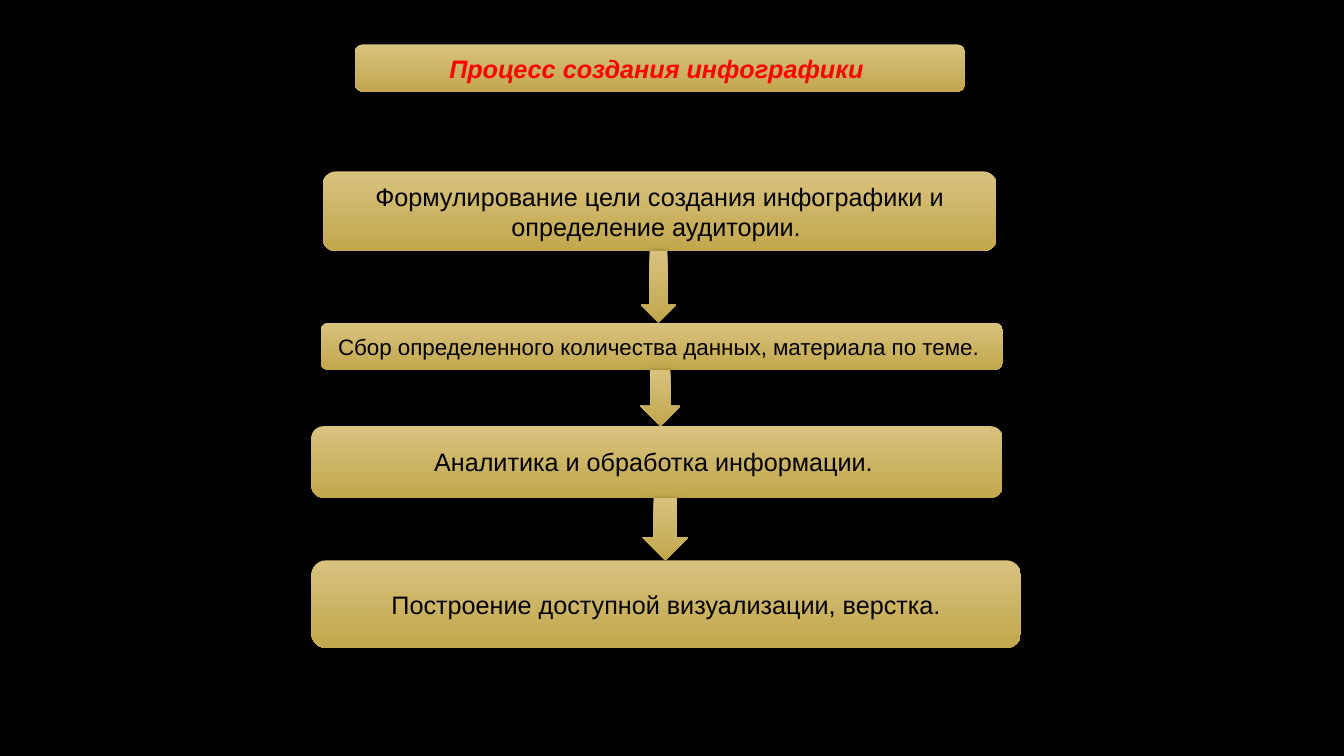
from dataclasses import dataclass

from lxml import etree
from pptx import Presentation
from pptx.dml.color import RGBColor
from pptx.enum.shapes import MSO_SHAPE
from pptx.enum.text import MSO_ANCHOR, PP_ALIGN
from pptx.oxml.ns import qn
from pptx.util import Cm, Pt

ROUNDED = MSO_SHAPE.ROUNDED_RECTANGLE
DOWN_ARROW = MSO_SHAPE.DOWN_ARROW
MIDDLE = MSO_ANCHOR.MIDDLE
CENTER = PP_ALIGN.CENTER


@dataclass(frozen=True)
class Theme:
    background: str = "000000"
    gold_light: str = "D8C27E"
    gold_dark: str = "C2A74D"
    title: str = "FF0000"
    text: str = "000000"
    shadow: str = "000000"
    font: str = "Arial"
    size: int = 18
    small_size: int = 16


class ProcessSlide:
    """Draws gold boxes and arrows on one slide in a shared style."""

    def __init__(self, slide, theme):
        self.slide = slide
        self.theme = theme
        fill = slide.background.fill
        fill.solid()
        fill.fore_color.rgb = RGBColor.from_string(theme.background)

    def gold_shape(self, kind, left, top, width, height):
        shape = self.slide.shapes.add_shape(kind, Cm(left), Cm(top), Cm(width), Cm(height))
        shape.fill.gradient()
        shape.fill.gradient_angle = 270
        colors = (self.theme.gold_light, self.theme.gold_dark)
        for stop, color in zip(shape.fill.gradient_stops, colors):
            stop.color.rgb = RGBColor.from_string(color)
        shape.line.fill.background()
        self.add_shadow(shape)
        return shape

    def add_shadow(self, shape):
        shape.shadow.inherit = False
        effects = shape.element.spPr.find(qn("a:effectLst"))
        shadow = etree.SubElement(
            effects, qn("a:outerShdw"), blurRad=str(Pt(6)), dist=str(Pt(3)),
            dir="5400000", algn="ctr", rotWithShape="0")
        color = etree.SubElement(shadow, qn("a:srgbClr"), val=self.theme.shadow)
        etree.SubElement(color, qn("a:alpha"), val="75000")

    def box(self, text, bounds, size, color, emphasis=False):
        shape = self.gold_shape(ROUNDED, *bounds)
        frame = shape.text_frame
        frame.word_wrap = True
        frame.vertical_anchor = MIDDLE
        frame.text = text
        paragraph = frame.paragraphs[0]
        paragraph.alignment = CENTER
        for run in paragraph.runs:
            run.font.name = self.theme.font
            run.font.size = Pt(size)
            run.font.bold = emphasis
            run.font.italic = emphasis
            run.font.color.rgb = RGBColor.from_string(color)

    def arrow(self, left, width, top, bottom):
        self.gold_shape(DOWN_ARROW, left, top, width, bottom - top)


def main():
    theme = Theme()
    presentation = Presentation()
    presentation.slide_width = Cm(33.87)
    presentation.slide_height = Cm(19.05)
    slide = presentation.slides.add_slide(presentation.slide_layouts[6])
    process = ProcessSlide(slide, theme)

    process.box("Процесс создания инфографики ", (8.94, 1.12, 15.39, 1.19),
                theme.size, theme.title, emphasis=True)

    steps = [
        ("Формулирование цели создания инфографики и определение аудитории. ",
         (8.13, 4.32, 16.99, 2.01), theme.size),
        ("Сбор определенного количества данных, материала по теме. ",
         (8.08, 8.13, 17.2, 1.19), theme.small_size),
        ("Аналитика и обработка информации. ",
         (7.85, 10.74, 17.42, 1.8), theme.size),
        (" Построение доступной визуализации, верстка. ",
         (7.85, 14.12, 17.88, 2.21), theme.size),
    ]
    arrows = [(16.15, 0.89), (16.13, 1.02), (16.18, 1.17)]

    previous_bottom = None
    for index, (text, bounds, size) in enumerate(steps):
        top, height = bounds[1], bounds[3]
        if index:
            process.arrow(*arrows[index - 1], previous_bottom, top)
        process.box(text, bounds, size, theme.text)
        previous_bottom = top + height

    presentation.save("out.pptx")


if __name__ == "__main__":
    main()
